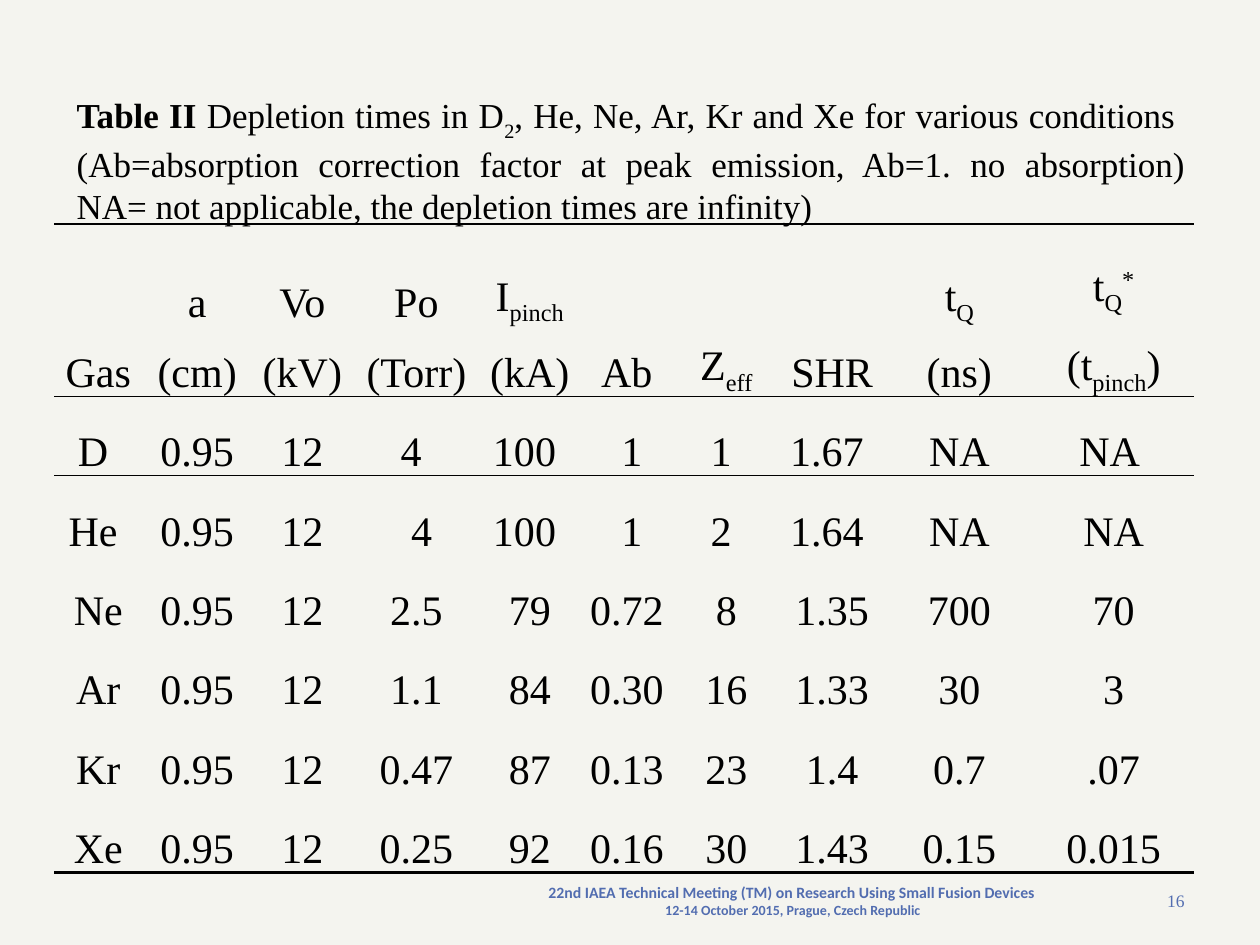
from typing import NamedTuple

from pptx import Presentation
from pptx.dml.color import RGBColor
from pptx.enum.text import MSO_ANCHOR as Anchor, PP_ALIGN as Align
from pptx.oxml import parse_xml
from pptx.oxml.ns import nsdecls
from pptx.util import Inches, Pt

COLORS = {"background": "F4F4EF", "text": "000000", "footer": "526DB0"}
SERIF = "Times New Roman"
NO_STYLE = "{2D5ABB26-0587-4C30-8999-92F81FD0307C}"


class Span(NamedTuple):
    text: str
    baseline: int = 0
    bold: bool = False


class Style(NamedTuple):
    size: float
    font: str = SERIF
    color: str = "text"


def sub(text: str, percent: int = 25) -> Span:
    return Span(text, -percent)


TITLE = [
    Span("Table II ", bold=True), Span("Depletion times in D"), sub("2", 30),
    Span(", He, Ne, Ar, Kr and Xe for various conditions \n"
         "(Ab=absorption correction factor at peak emission, Ab=1. no absorption)\n"
         "NA= not applicable, the depletion times are infinity)"),
]

# Each heading is a list of paragraphs, each paragraph a list of spans.
HEADINGS = [
    [[Span("Gas")]],
    [[Span("a")], [Span("(cm)")]],
    [[Span("Vo (kV)")]],
    [[Span("Po (Torr)")]],
    [[Span("I"), sub("pinch"), Span(" (kA)")]],
    [[Span("Ab")]],
    [[Span("Z"), sub("eff")]],
    [[Span("SHR")]],
    [[Span("t"), sub("Q")], [Span("(ns)")]],
    [[Span("t"), sub("Q"), Span("*", 30)], [Span("(t"), sub("pinch"), Span(")")]],
]
GASES = [
    ["D ", "0.95", "12", "4 ", "100 ", " 1", "1 ", "1.67 ", "NA", "NA "],
    ["He ", "0.95", "12", " 4", "100 ", " 1", "2 ", "1.64 ", "NA", "NA"],
    ["Ne", "0.95", "12", "2.5", "79", "0.72", "8", "1.35", "700", "70"],
    ["Ar", "0.95", "12", "1.1", "84", "0.30", "16", "1.33", "30", "3"],
    ["Kr", "0.95", "12", "0.47", "87", "0.13", "23", "1.4", "0.7", ".07"],
    ["Xe", "0.95", "12", "0.25", "92", "0.16", "30", "1.43", "0.15", "0.015"],
]
COLUMN_WIDTHS = [0.7, 0.87, 0.8, 1.01, 0.79, 0.75, 0.83, 0.85, 1.17, 1.28]
ROW_HEIGHT = 0.63


def add_spans(para, spans: list[Span], style: Style) -> None:
    """Append styled spans; a newline in a span becomes a line break."""
    for span in spans:
        for index, line in enumerate(span.text.split("\n")):
            if index:
                para.add_line_break()
            run = para.add_run()
            run.text = line
            run.font.size = Pt(style.size)
            run.font.name = style.font
            run.font.bold = span.bold
            run.font.color.rgb = RGBColor.from_string(COLORS[style.color])
            if span.baseline:
                run.font._element.set("baseline", str(span.baseline * 1000))


def add_text(slide, left: float, top: float, width: float, height: float,
             align: Align, lines: list[tuple[list[Span], Style]]) -> None:
    box = slide.shapes.add_textbox(Inches(left), Inches(top), Inches(width), Inches(height))
    frame = box.text_frame
    frame.word_wrap = True
    frame.vertical_anchor = Anchor.MIDDLE
    for index, (spans, style) in enumerate(lines):
        para = frame.add_paragraph() if index else frame.paragraphs[0]
        para.alignment = align
        add_spans(para, spans, style)


def add_border(cell, side: str, points: float) -> None:
    cell._tc.get_or_add_tcPr().append(parse_xml(
        f'<a:ln{side} {nsdecls("a")} w="{Pt(points)}"><a:solidFill>'
        f'<a:srgbClr val="{COLORS["text"]}"/></a:solidFill></a:ln{side}>'))


def fill_cell(cell, paragraphs: list[list[Span]]) -> None:
    cell.vertical_anchor = Anchor.BOTTOM
    cell.margin_left = cell.margin_right = Inches(0.07)
    cell.margin_top = cell.margin_bottom = 0
    frame = cell.text_frame
    for index, spans in enumerate(paragraphs):
        para = frame.add_paragraph() if index else frame.paragraphs[0]
        para.alignment = Align.CENTER
        para.line_spacing = 1.5
        add_spans(para, spans, Style(24))
    cell.fill.background()


def add_gas_table(slide) -> None:
    rows = [HEADINGS] + [[[[Span(value)]] for value in gas] for gas in GASES]
    last = len(rows) - 1
    frame = slide.shapes.add_table(
        len(rows), len(COLUMN_WIDTHS), Inches(0.43), Inches(1.78),
        Inches(sum(COLUMN_WIDTHS)), Inches(ROW_HEIGHT * (len(rows) + 1)))
    table = frame.table
    table.first_row = table.horz_banding = False
    table._tbl.tblPr[0].text = NO_STYLE
    for column, width in zip(table.columns, COLUMN_WIDTHS):
        column.width = Inches(width)
    for row_index, row in enumerate(rows):
        table.rows[row_index].height = Inches(ROW_HEIGHT * (1 if row_index else 2))
        for column_index, paragraphs in enumerate(row):
            cell = table.cell(row_index, column_index)
            if row_index < 2:
                add_border(cell, "T", 1 if row_index else 1.5)
            if row_index in (0, last):
                add_border(cell, "B", 1.5 if row_index else 1)
            fill_cell(cell, paragraphs)


def main() -> None:
    deck = Presentation()
    deck.slide_width, deck.slide_height = Inches(10), Inches(7.5)
    slide = deck.slides.add_slide(deck.slide_layouts[6])
    slide.background.fill.solid()
    slide.background.fill.fore_color.rgb = RGBColor.from_string(COLORS["background"])

    add_text(slide, 0.51, 0.6, 9, 1.34, Align.JUSTIFY, [(TITLE, Style(20))])
    add_gas_table(slide)
    add_text(slide, 4.13, 6.95, 4.33, 0.4, Align.CENTER, [
        ([Span("22nd IAEA Technical Meeting (TM) on Research Using Small Fusion Devices ",
               bold=True)], Style(9, "Calibri", "footer")),
        ([Span("12-14 October 2015, Prague, Czech Republic", bold=True)],
         Style(8, "Calibri", "footer")),
    ])
    add_text(slide, 7.17, 6.95, 2.33, 0.4, Align.RIGHT,
             [([Span("16")], Style(10, color="footer"))])
    deck.save("out.pptx")


if __name__ == "__main__":
    main()
